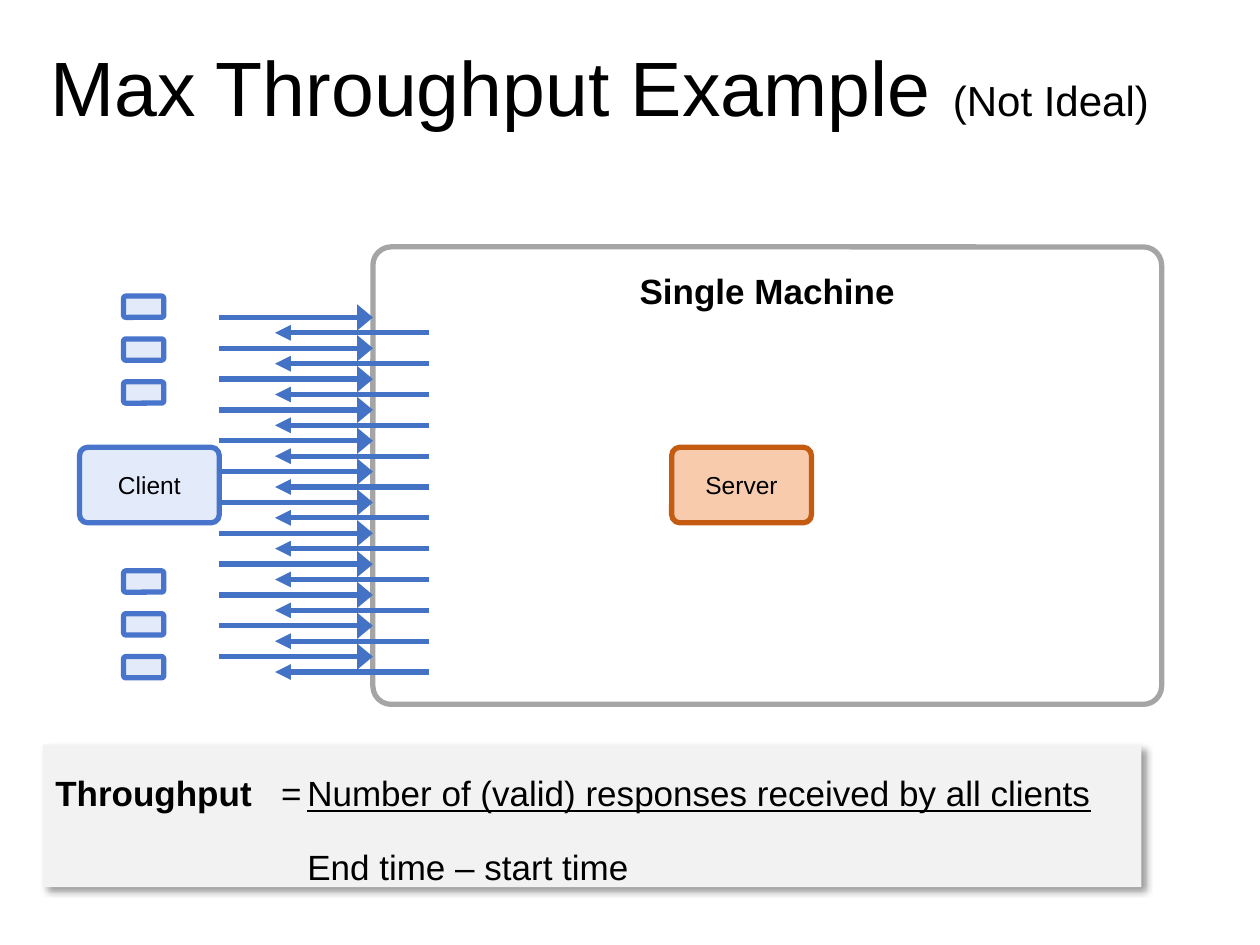
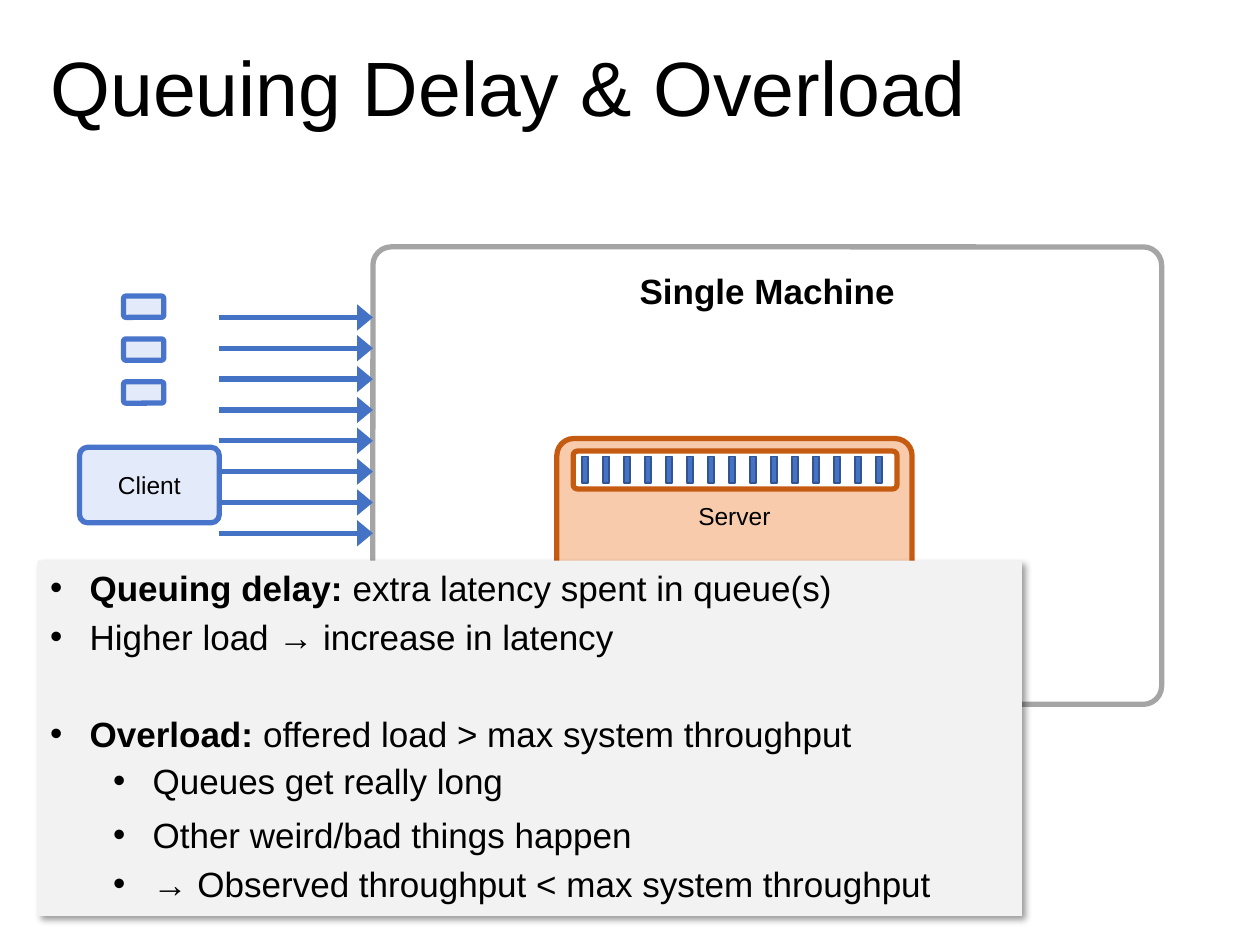
import pptx
import pptx.util
import pptx.dml.color
import pptx.enum.shapes
import pptx.enum.text
import pptx.oxml
import pptx.oxml.ns

Pt = pptx.util.Pt
RGBColor = pptx.dml.color.RGBColor
Shape = pptx.enum.shapes.MSO_SHAPE
Align = pptx.enum.text.PP_ALIGN
Anchor = pptx.enum.text.MSO_ANCHOR

BLACK = RGBColor(0x00, 0x00, 0x00)
WHITE = RGBColor(0xFF, 0xFF, 0xFF)
PANEL_GRAY = RGBColor(0xF2, 0xF2, 0xF2)
MACHINE_GRAY = RGBColor(0xA5, 0xA5, 0xA5)
CLIENT_FILL = RGBColor(0xE3, 0xEA, 0xF9)
CLIENT_LINE = RGBColor(0x49, 0x74, 0xCB)
SERVER_FILL = RGBColor(0xF8, 0xCB, 0xAD)
SERVER_LINE = RGBColor(0xC5, 0x5A, 0x11)
MESSAGE_BLUE = RGBColor(0x44, 0x72, 0xC4)
QUEUED_LINE = RGBColor(0x32, 0x54, 0x91)
FONT = "Arial"

THROUGHPUT_TITLE = [("Max Throughput Example ", 44), ("(Not Ideal)", 24)]
OVERLOAD_TITLE = [("Queuing Delay & Overload", 44)]

NUMERATOR = [
    ("Throughput", {"bold": True}),
    ("\t=\t", {}),
    ("Number of (valid) responses received by all clients", {"underline": True}),
]
DENOMINATOR = [("End time – start time", {})]

OVERLOAD_NOTES = [
    (0, 4, 0, [("Queuing delay: ", True), ("extra latency spent in queue(s)", False)]),
    (0, 4, 0, [("Higher load → increase in latency", False)]),
    (0, 31, 0, [("Overload: ", True), ("offered load > max system throughput", False)]),
    (1, 3, 3, [("Queues get really long", False)]),
    (1, 4, 0, [("Other weird/bad things happen", False)]),
    (1, 4, 0, [("→ Observed throughput < max system throughput", False)]),
]

TITLE_BOX = (21.6, 0, 676.8, 104.4)
MACHINE_BOX = (213.1, 141.1, 450.7, 261.4)
CLIENT_BOX = (45.4, 255.6, 79.9, 43.2)
SERVER_BOX = (383.8, 255.6, 79.9, 43.2)
BUSY_SERVER_BOX = (318.2, 250.6, 203, 87.8)
QUEUE_BOX = (327.6, 257.8, 185, 21.6)
FORMULA_BOX = (24.5, 425.5, 627.8, 81.4)
NOTES_BOX = (21.6, 320.4, 562.3, 203)

UPPER_CLIENTS_TOP = 169.2
LOWER_CLIENTS_TOP = 326.2
SMALL_CLIENT_STEP = 24.5
REQUESTS = {"start": 125.3, "end": 213.1, "top": 181.4, "head_width": "lg"}
RESPONSES = {"start": 245.2, "end": 157.2, "top": 190.2, "head_width": "med"}
MESSAGE_STEP = 17.62
QUEUED_COUNT = 15
QUEUED_STEP = 12


def add_xml(parent, tag, content="", attributes=""):
    namespaces = pptx.oxml.ns.nsdecls("a")
    parent.append(pptx.oxml.parse_xml(f"<a:{tag} {namespaces} {attributes}>{content}</a:{tag}>"))


def add_run(paragraph, text, size, bold=False, underline=False):
    run = paragraph.add_run()
    run.text = text
    font = run.font
    font.name, font.size, font.bold, font.underline = FONT, Pt(size), bold, underline
    font.color.rgb = BLACK


def add_box(slide, kind, box, fill, line, width=3, corner=None):
    shape = slide.shapes.add_shape(kind, *map(Pt, box))
    shape.shadow.inherit = False
    if fill is None:
        shape.fill.background()
    else:
        shape.fill.solid()
        shape.fill.fore_color.rgb = fill
    if line is None:
        shape.line.fill.background()
    else:
        shape.line.color.rgb = line
        shape.line.width = Pt(width)
    if corner is not None:
        shape.adjustments[0] = corner
    return shape


def add_node(slide, box, fill, line, label="", size=14, bold=False, corner=0.11):
    node = add_box(slide, Shape.ROUNDED_RECTANGLE, box, fill, line, corner=corner)
    if label:
        paragraph = node.text_frame.paragraphs[0]
        paragraph.alignment = Align.CENTER
        add_run(paragraph, label, size, bold)
    return node


def add_small_clients(slide, top):
    for index in range(3):
        box = (70.6, top + index * SMALL_CLIENT_STEP, 23, 12.2)
        add_node(slide, box, CLIENT_FILL, CLIENT_LINE)


def add_messages(slide, count, start, end, top, head_width):
    group = slide.shapes.add_group_shape()
    for index in range(count):
        y = Pt(top + index * MESSAGE_STEP)
        arrow = group.shapes.add_connector(
            pptx.enum.shapes.MSO_CONNECTOR.STRAIGHT, Pt(start), y, Pt(end), y)
        arrow.line.color.rgb = MESSAGE_BLUE
        arrow.line.width = Pt(3)
        add_xml(arrow.line._get_or_add_ln(), "tailEnd",
                attributes=f'type="triangle" w="{head_width}" len="med"')
        add_xml(arrow._element.spPr, "effectLst")


def add_panel(slide, box):
    panel = add_box(slide, Shape.RECTANGLE, box, PANEL_GRAY, None)
    effects = panel._element.spPr.find(pptx.oxml.ns.qn("a:effectLst"))
    add_xml(effects, "outerShdw",
            '<a:prstClr val="black"><a:alpha val="40000"/></a:prstClr>',
            f'blurRad="{Pt(4)}" dist="{Pt(3)}" dir="2700000" algn="tl" rotWithShape="0"')
    panel.text_frame.word_wrap = True
    panel.text_frame.vertical_anchor = Anchor.TOP
    return panel.text_frame


def next_paragraph(frame, index):
    paragraph = frame.add_paragraph() if index else frame.paragraphs[0]
    paragraph.alignment = Align.LEFT
    return paragraph


def add_formula(slide):
    frame = add_panel(slide, FORMULA_BOX)
    for index, parts in enumerate([NUMERATOR, DENOMINATOR]):
        paragraph = next_paragraph(frame, index)
        paragraph.line_spacing = 1.5
        paragraph.space_before = paragraph.space_after = Pt(3)
        properties = paragraph._p.get_or_add_pPr()
        if index:
            properties.set("marL", str(Pt(144)))
        else:
            stops = "".join(f'<a:tab pos="{Pt(stop)}" algn="l"/>' for stop in (129, 144))
            add_xml(properties, "tabLst", stops)
        for text, style in parts:
            add_run(paragraph, text, 20, **style)


def add_notes(slide):
    frame = add_panel(slide, NOTES_BOX)
    for index, (level, before, after, parts) in enumerate(OVERLOAD_NOTES):
        paragraph = next_paragraph(frame, index)
        paragraph.level = level
        paragraph.space_before, paragraph.space_after = Pt(before), Pt(after)
        properties = paragraph._p.get_or_add_pPr()
        properties.set("marL", str(Pt(22.5 + 36 * level)))
        properties.set("indent", str(Pt(-22.5)))
        add_xml(properties, "buFont", attributes=f'typeface="{FONT}"')
        add_xml(properties, "buChar", attributes='char="•"')
        for text, bold in parts:
            add_run(paragraph, text, 20, bold)


def add_queue(slide):
    add_node(slide, QUEUE_BOX, WHITE, SERVER_LINE)
    for index in range(QUEUED_COUNT):
        box = (332.6 + index * QUEUED_STEP, 260.8, 3.6, 15.1)
        add_box(slide, Shape.RECTANGLE, box, MESSAGE_BLUE, QUEUED_LINE, width=1)


def add_scene(presentation, title_parts, server_box):
    slide = presentation.slides.add_slide(presentation.slide_layouts[5])
    title = slide.shapes.title
    title.left, title.top, title.width, title.height = map(Pt, TITLE_BOX)
    frame = title.text_frame
    frame.auto_size = pptx.enum.text.MSO_AUTO_SIZE.NONE
    frame.vertical_anchor = Anchor.MIDDLE
    paragraph = frame.paragraphs[0]
    paragraph.alignment = Align.LEFT
    paragraph.line_spacing = 0.9
    for text, size in title_parts:
        add_run(paragraph, text, size)

    add_node(slide, CLIENT_BOX, CLIENT_FILL, CLIENT_LINE, "Client")
    machine = add_node(slide, MACHINE_BOX, None, MACHINE_GRAY, "Single Machine", 20, True, 0.04)
    machine.text_frame.vertical_anchor = Anchor.TOP
    machine.text_frame.margin_top = Pt(10)
    add_small_clients(slide, UPPER_CLIENTS_TOP)
    add_node(slide, server_box, SERVER_FILL, SERVER_LINE, "Server")
    return slide


def main():
    presentation = pptx.Presentation()
    presentation.slide_width, presentation.slide_height = Pt(720), Pt(540)

    throughput = add_scene(presentation, THROUGHPUT_TITLE, SERVER_BOX)
    add_small_clients(throughput, LOWER_CLIENTS_TOP)
    add_messages(throughput, 12, **REQUESTS)
    add_messages(throughput, 12, **RESPONSES)
    add_formula(throughput)

    overload = add_scene(presentation, OVERLOAD_TITLE, BUSY_SERVER_BOX)
    add_messages(overload, 8, **REQUESTS)
    add_queue(overload)
    add_notes(overload)

    presentation.save("out.pptx")


if __name__ == "__main__":
    main()
